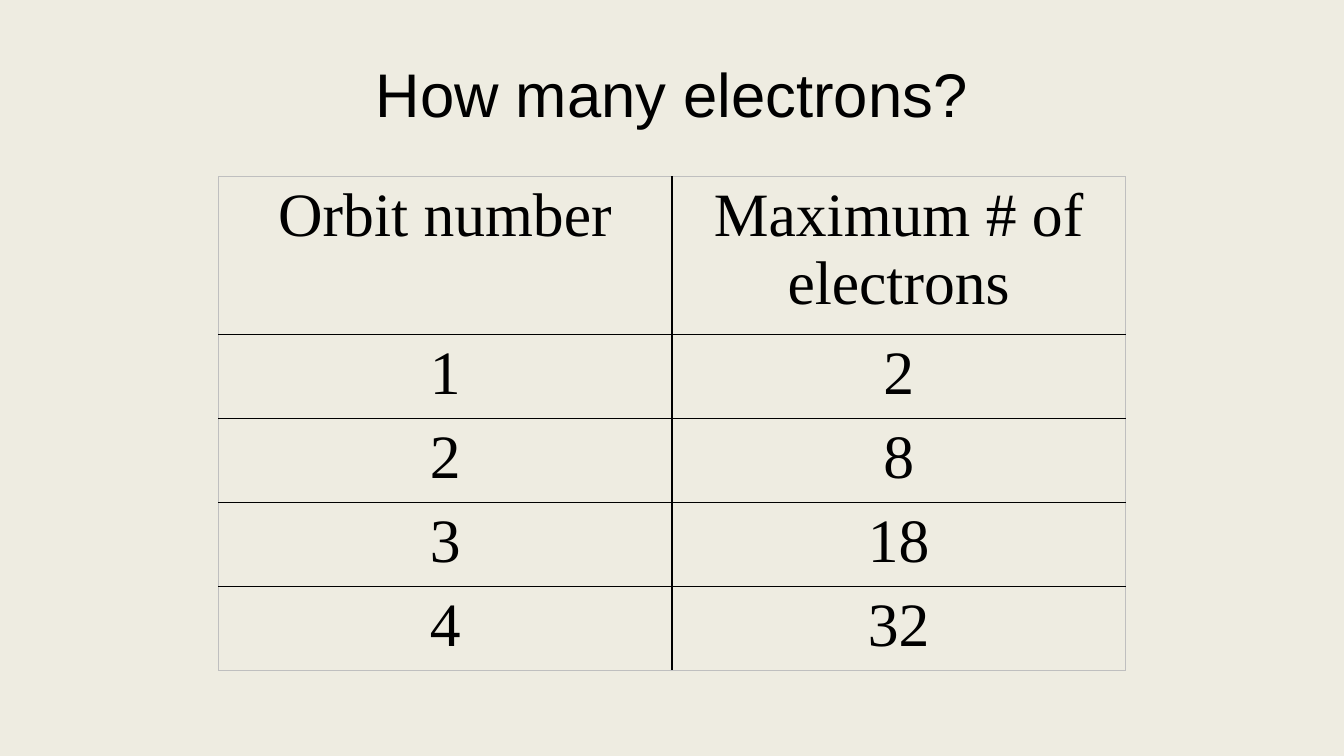
from lxml.etree import SubElement
from pptx import Presentation
from pptx.dml.color import RGBColor
from pptx.enum.text import MSO_ANCHOR, PP_ALIGN
from pptx.oxml.ns import qn
from pptx.util import Pt

TITLE = "How many electrons?"
ROWS = [
    ("Orbit number", "Maximum # of electrons"),
    ("1", "2"),
    ("2", "8"),
    ("3", "18"),
    ("4", "32"),
]
COLORS = {"background": "EEECE1", "ink": "000000", "frame": "BFBFBF"}
TEXT_SIZE = 44
TABLE_LEFT, TABLE_TOP = 156, 126
COLUMN_WIDTH, HEADER_HEIGHT, ROW_HEIGHT = 324, 113, 60


def write(text_frame, text, font_name):
    paragraph = text_frame.paragraphs[0]
    paragraph.alignment = PP_ALIGN.CENTER
    run = paragraph.add_run()
    run.text = text
    run.font.name = font_name
    run.font.size = Pt(TEXT_SIZE)
    run.font.color.rgb = RGBColor.from_string(COLORS["ink"])


def set_borders(cell, outer_sides):
    """Draw black rules inside the table and a faint frame on its outer sides."""
    properties = cell._tc.get_or_add_tcPr()
    for side in ("L", "R", "T", "B"):
        outer = side in outer_sides
        line = SubElement(properties, qn(f"a:ln{side}"), w=str(Pt(0.5 if outer else 1)))
        fill = SubElement(line, qn("a:solidFill"))
        SubElement(fill, qn("a:srgbClr"), val=COLORS["frame" if outer else "ink"])


def add_title(slide):
    title = slide.shapes.title
    title.left, title.top, title.width, title.height = Pt(48), Pt(21.6), Pt(864), Pt(90)
    title.text_frame.vertical_anchor = MSO_ANCHOR.MIDDLE
    write(title.text_frame, TITLE, "Arial")


def add_electron_table(slide):
    row_count, column_count = len(ROWS), len(ROWS[0])
    heights = [HEADER_HEIGHT] + [ROW_HEIGHT] * (row_count - 1)
    table = slide.shapes.add_table(
        row_count, column_count, Pt(TABLE_LEFT), Pt(TABLE_TOP),
        Pt(COLUMN_WIDTH * column_count), Pt(sum(heights)),
    ).table
    table.first_row = table.horz_banding = False
    for column in table.columns:
        column.width = Pt(COLUMN_WIDTH)
    for row_index, (values, height) in enumerate(zip(ROWS, heights)):
        table.rows[row_index].height = Pt(height)
        for column_index, value in enumerate(values):
            cell = table.cell(row_index, column_index)
            edges = {
                "L": column_index == 0,
                "R": column_index == column_count - 1,
                "T": row_index == 0,
                "B": row_index == row_count - 1,
            }
            set_borders(cell, [side for side, outer in edges.items() if outer])
            cell.fill.background()
            write(cell.text_frame, value, "Times New Roman")


def main():
    presentation = Presentation()
    presentation.slide_width, presentation.slide_height = Pt(960), Pt(540)
    slide = presentation.slides.add_slide(presentation.slide_layouts[5])
    slide.background.fill.solid()
    slide.background.fill.fore_color.rgb = RGBColor.from_string(COLORS["background"])
    add_title(slide)
    add_electron_table(slide)
    presentation.save("out.pptx")


if __name__ == "__main__":
    main()
